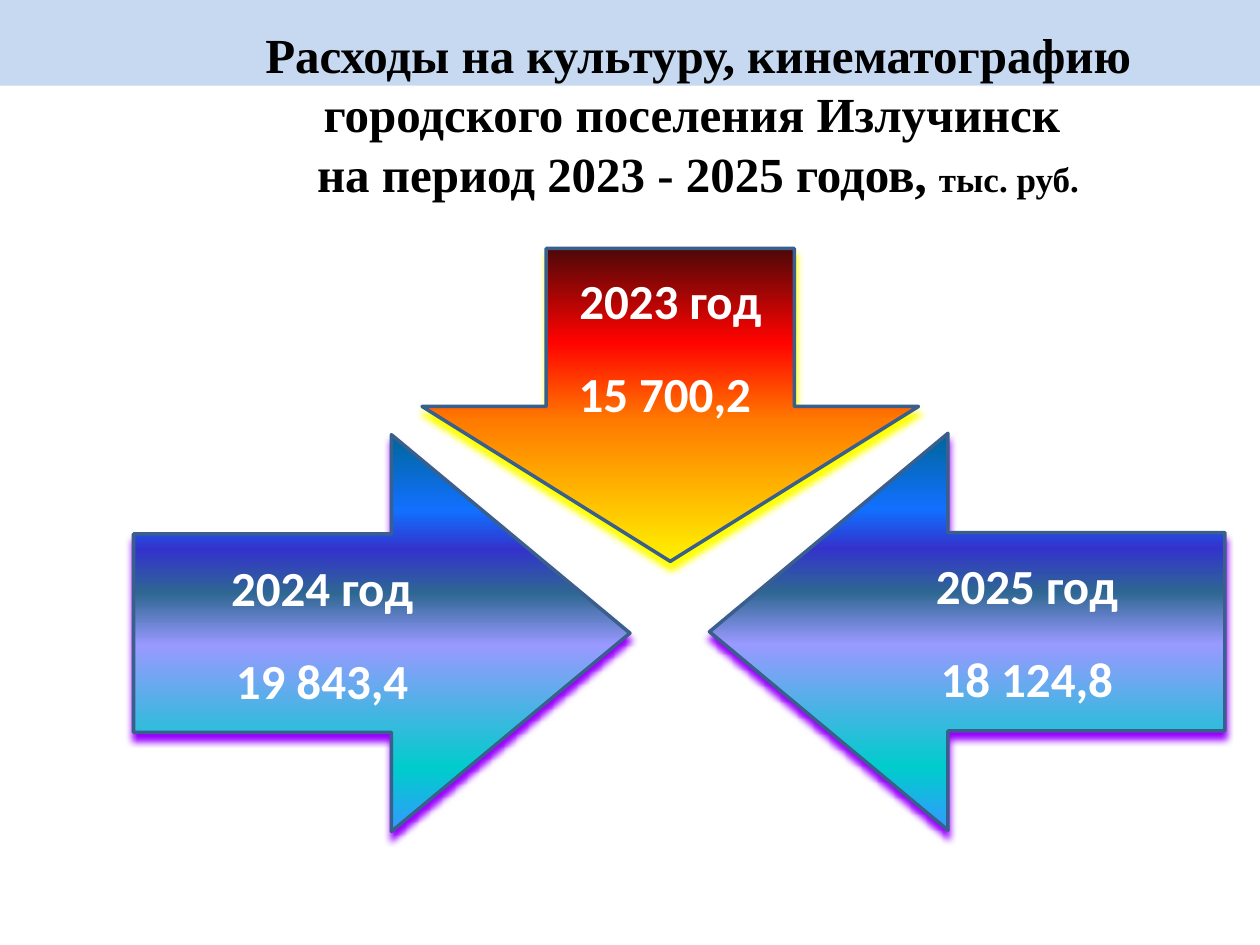
from lxml.etree import SubElement
from pptx import Presentation
from pptx.dml.color import RGBColor
from pptx.enum.shapes import MSO_SHAPE as Shape
from pptx.enum.text import MSO_ANCHOR as Anchor, PP_ALIGN as Align
from pptx.oxml.ns import qn
from pptx.util import Pt

FIRE = [(0, "FFF200"), (45, "FF7A00"), (70, "FF0300"), (100, "4D0808")]
OCEAN = [(0, "3399FF"), (16, "00CCCC"), (47, "9999FF"), (60, "2E6792"),
         (71, "3333CC"), (81, "1170FF"), (100, "006699")]


def rgb(color):
    return RGBColor.from_string(color)


class Deck:
    title_font = "Times New Roman"
    body_font = "Calibri"
    size = 28
    outline = "3A5F8C"

    def __init__(self, width, height):
        self.prs = Presentation()
        self.prs.slide_width, self.prs.slide_height = Pt(width), Pt(height)
        self.s = self.prs.slides.add_slide(self.prs.slide_layouts[5])

    def shape(self, kind, box):
        sp = self.s.shapes.add_shape(kind, *map(Pt, box))
        sp.shadow.inherit = False
        return sp

    def band(self, box, color):
        sp = self.shape(Shape.RECTANGLE, box)
        sp.fill.solid()
        sp.fill.fore_color.rgb = rgb(color)
        sp.line.fill.background()
        self.s.shapes._spTree.insert(2, sp._element)

    def title(self, box, text, unit):
        sp = self.s.shapes.title
        sp.left, sp.top, sp.width, sp.height = map(Pt, box)
        tf = sp.text_frame
        tf.vertical_anchor = Anchor.TOP
        p = tf.paragraphs[0]
        p.text = text
        p.alignment = Align.CENTER
        p.line_spacing = Pt(34)
        p.add_run().text = unit
        for r, size in zip(p.runs, [self.size] * (len(p.runs) - 1) + [20]):
            r.font.name, r.font.size, r.font.bold = self.title_font, Pt(size), True
            r.font.color.rgb = rgb("000000")

    def gradient(self, sp, stops):
        sp.fill.gradient()
        sp.fill.gradient_angle = 90
        gs_list = sp._element.spPr.find(".//" + qn("a:gsLst"))
        for gs in list(gs_list):
            gs_list.remove(gs)
        for pos, color in stops:
            gs = SubElement(gs_list, qn("a:gs"), pos=str(pos * 1000))
            SubElement(gs, qn("a:srgbClr"), val=color)

    def shadow(self, sp, color):
        effects = sp._element.spPr.find(qn("a:effectLst"))
        outer = SubElement(effects, qn("a:outerShdw"), blurRad=str(Pt(4)),
                           dist=str(Pt(4)), dir="5400000", rotWithShape="0")
        SubElement(outer, qn("a:srgbClr"), val=color)

    def arrow(self, kind, box, head, stops, glow, lines, bottom=3.6):
        sp = self.shape(kind, box)
        sp.adjustments[0], sp.adjustments[1] = 0.5, head
        self.gradient(sp, stops)
        sp.line.color.rgb = rgb(self.outline)
        sp.line.width = Pt(2)
        self.shadow(sp, glow)
        tf = sp.text_frame
        tf.word_wrap = True
        tf.vertical_anchor = Anchor.MIDDLE
        tf.margin_bottom = Pt(bottom)
        for i, line in enumerate(lines):
            p = tf.add_paragraph() if i else tf.paragraphs[0]
            p.text = line
            p.alignment = Align.CENTER
            if i:
                p.space_before = Pt(19.5)
            p.font.name, p.font.size, p.font.bold = self.body_font, Pt(self.size), True
            p.font.color.rgb = rgb("FFFFFF")


def main():
    deck = Deck(720, 540)
    deck.band((0, 0, 720, 49), "C6D9F1")
    deck.title((74.9, 10, 648, 90),
               "Расходы на культуру, кинематографию\v"
               "городского поселения Излучинск \v"
               "на период 2023 - 2025 годов, ", "тыс. руб.")
    deck.arrow(Shape.DOWN_ARROW, (241.2, 142, 283.7, 178.8), 0.495, FIRE, "FFFF00",
               ["2023 год", "15 700,2 "], bottom=25.6)
    deck.arrow(Shape.RIGHT_ARROW, (76.3, 248.4, 283.7, 226.8), 0.601, OCEAN, "9900FF",
               ["2024 год", "19 843,4"])
    deck.arrow(Shape.LEFT_ARROW, (405.4, 247.6, 294.5, 226.8), 0.601, OCEAN, "9900FF",
               ["2025 год", "18 124,8"])
    deck.prs.save("out.pptx")


if __name__ == "__main__":
    main()
